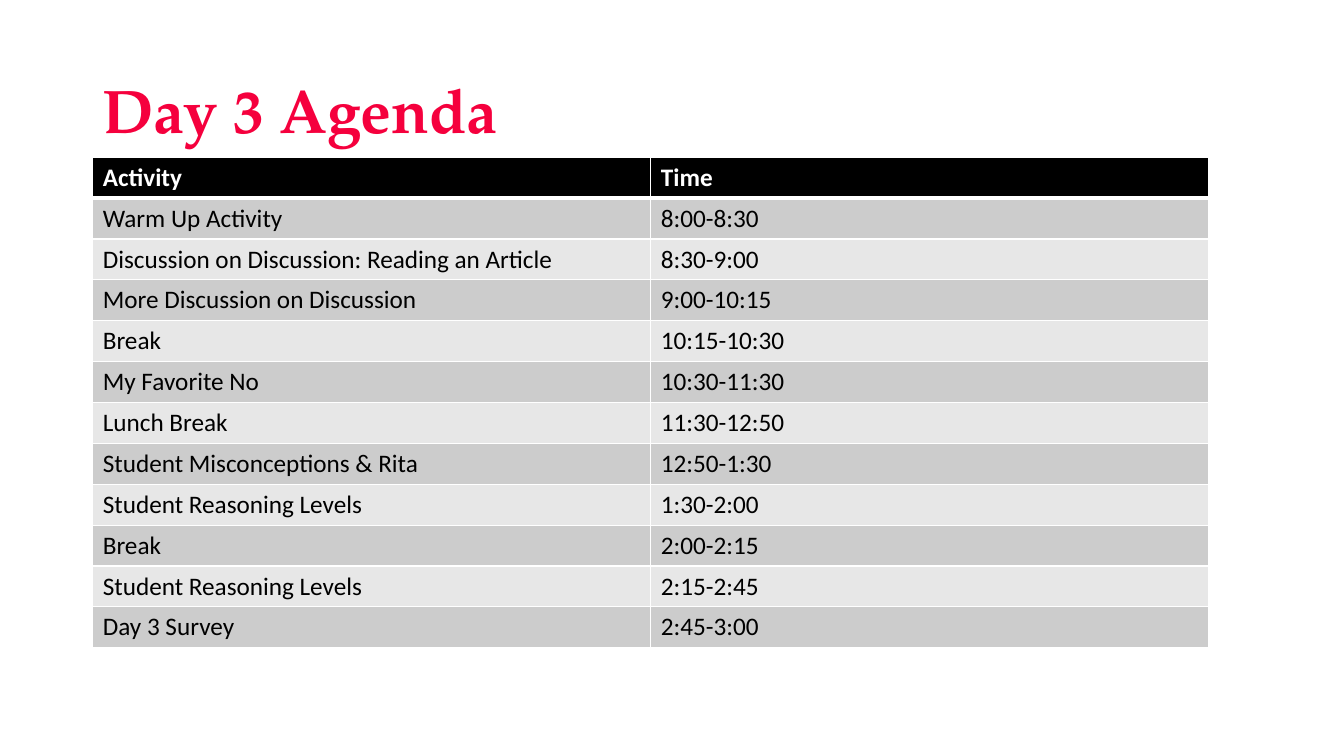
from lxml import etree
from pptx import Presentation, util as u
from pptx.dml.color import RGBColor
from pptx.enum import text
from pptx.oxml.ns import qn

TITLE = "Day 3 Agenda"
AGENDA = [
    ("Activity", "Time"),
    ("Warm Up Activity", "8:00-8:30"),
    ("Discussion on Discussion: Reading an Article", "8:30-9:00"),
    ("More Discussion on Discussion", "9:00-10:15"),
    ("Break", "10:15-10:30"),
    ("My Favorite No", "10:30-11:30"),
    ("Lunch Break", "11:30-12:50"),
    ("Student Misconceptions & Rita", "12:50-1:30"),
    ("Student Reasoning Levels", "1:30-2:00"),
    ("Break", "2:00-2:15"),
    ("Student Reasoning Levels", "2:15-2:45"),
    ("Day 3 Survey", "2:45-3:00"),
]

RED = RGBColor(0xF5, 0x00, 0x3D)
BLACK = RGBColor(0, 0, 0)
WHITE = RGBColor(0xFF, 0xFF, 0xFF)
DARK = RGBColor(0xCC, 0xCC, 0xCC)
LIGHT = RGBColor(0xE7, 0xE7, 0xE7)

LEFT, TOP, WIDE, HIGH = 0.92, 1.56, 11.07, 4.87


def style(font, name, size, color, bold):
    font.name, font.size, font.bold = name, u.Pt(size), bold
    font.color.rgb = color


def border(cell, side, width):
    line = etree.SubElement(cell._tc.get_or_add_tcPr(), qn("a:ln" + side),
                            w=str(u.Pt(width)))
    fill = etree.SubElement(line, qn("a:solidFill"))
    etree.SubElement(fill, qn("a:srgbClr"), val=str(WHITE))


deck = Presentation()
deck.slide_width, deck.slide_height = u.Inches(13.33), u.Inches(7.5)
slide = deck.slides.add_slide(deck.slide_layouts[6])

# Title
box = slide.shapes.add_textbox(u.Inches(LEFT), u.Inches(0.4),
                               u.Inches(11.5), u.Inches(1.45))
frame = box.text_frame
frame.word_wrap = True
frame.vertical_anchor = text.MSO_ANCHOR.MIDDLE
frame.text = TITLE
frame.paragraphs[0].line_spacing = 0.9
style(frame.paragraphs[0].runs[0].font, "TeX Gyre Pagella", 44, RED, True)

# Agenda table: equal rows and columns, dark and light bands
table = slide.shapes.add_table(len(AGENDA), 2, u.Inches(LEFT), u.Inches(TOP),
                               u.Inches(WIDE), u.Inches(HIGH)).table
for r, row in enumerate(AGENDA):
    head = r == 0
    shade = BLACK if head else DARK if r % 2 else LIGHT
    for c, words in enumerate(row):
        cell = table.cell(r, c)
        cell.text = words
        style(cell.text_frame.paragraphs[0].runs[0].font, "Calibri", 18,
              WHITE if head else BLACK, head)
        # A thick rule parts the header from the first row
        for side in "LRTB":
            thick = (r, side) in ((0, "B"), (1, "T"))
            border(cell, side, 3 if thick else 1)
        cell.fill.solid()
        cell.fill.fore_color.rgb = shade

deck.save("out.pptx")
